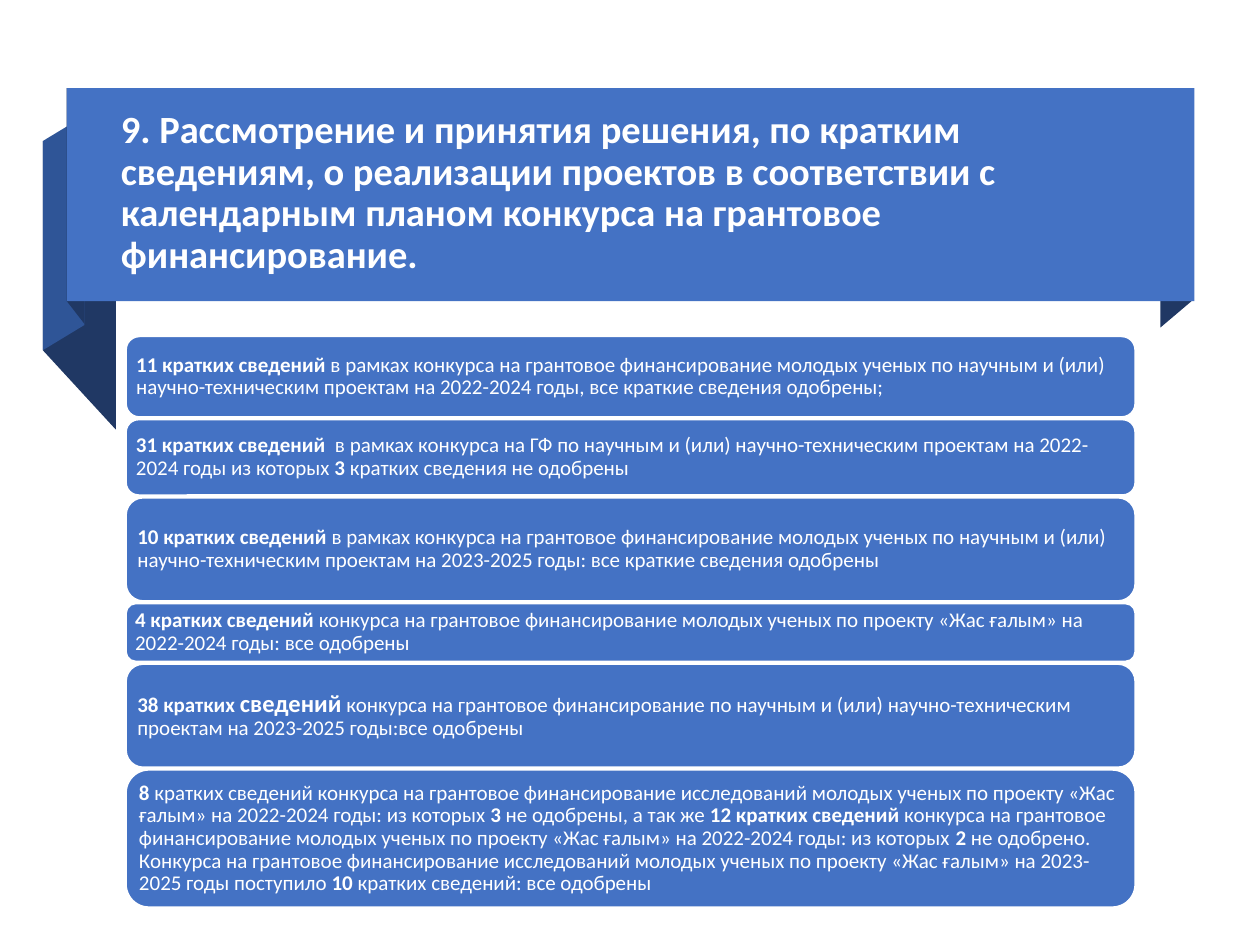
"""Build a ribbon-titled slide listing the decisions on project summaries."""
import pptx
import pptx.dml.color
import pptx.enum.shapes
import pptx.enum.text
import pptx.util

THEME = {
    "blue": "4472C4", "mid": "2F5597", "navy": "203864", "white": "FFFFFF",
    "font": "Calibri", "title": 22,
    "styles": {"plain": (12, False), "bold": (12, True), "large": (14, True)},
}
SHAPE = pptx.enum.shapes.MSO_SHAPE

prs = pptx.Presentation()
prs.slide_width = pptx.util.Inches(10)
prs.slide_height = pptx.util.Inches(7.5)
CELL = prs.slide_width / 100


def grid(*cells):
    return [round(c * CELL) for c in cells]


def paint(sp, color):
    sp.shadow.inherit = False
    sp.fill.solid()
    sp.fill.fore_color.rgb = pptx.dml.color.RGBColor.from_string(THEME[color])
    sp.line.fill.background()


s = prs.slides.add_slide(prs.slide_layouts[5])
white = pptx.dml.color.RGBColor.from_string(THEME["white"])

ribbon = s.shapes.add_group_shape()
folds = [
    ("navy", [(94.7, 23.8), (92.1, 26), (92.1, 9.1), (94.7, 7)]),
    ("navy", [(9.2, 34.1), (3.4, 27.8), (3.4, 11.2), (9.2, 17.5)]),
    ("mid", [(6.7, 25.8), (3.4, 27.8), (3.4, 11.2), (6.7, 9.2)]),
    ("navy", [(6.7, 25.7), (5.3, 23.9), (5.3, 7), (6.7, 8.9)]),
]
for color, corners in folds:
    points = [grid(*corner) for corner in corners]
    builder = ribbon.shapes.build_freeform(*points[0])
    builder.add_line_segments(points[1:], close=True)
    paint(builder.convert_to_shape(), color)
paint(ribbon.shapes.add_shape(SHAPE.RECTANGLE, *grid(5.3, 7, 89.5, 16.9)), "blue")

title = s.shapes.title
s.shapes.element.append(title.element)
title.left, title.top, title.width, title.height = grid(8.6, 8.1, 84.5, 14.5)
tf = title.text_frame
tf.text = (
    "9. Рассмотрение и принятия решения, по кратким сведениям, о реализации проектов "
    "в соответствии с календарным планом конкурса на грантовое финансирование."
)
tf.word_wrap = True
tf.auto_size = pptx.enum.text.MSO_AUTO_SIZE.NONE
tf.vertical_anchor = pptx.enum.text.MSO_ANCHOR.MIDDLE
p = tf.paragraphs[0]
p.alignment = pptx.enum.text.PP_ALIGN.LEFT
p.line_spacing = 0.9
r = p.runs[0]
r.font.name = THEME["font"]
r.font.size = pptx.util.Pt(THEME["title"])
r.font.bold = True
r.font.color.rgb = white

decisions = [
    (6.4, [
        ("bold", "11 кратких сведений"),
        ("plain", " в рамках конкурса на грантовое финансирование молодых ученых по научным "
                  "и (или) научно-техническим проектам на 2022-2024 годы, все краткие сведения "
                  "одобрены;"),
    ]),
    (6, [
        ("bold", "31 кратких сведений "),
        ("plain", " в рамках конкурса на ГФ по научным и (или) научно-техническим проектам "
                  "на 2022-2024 годы из которых "),
        ("bold", "3"),
        ("plain", " кратких сведения не одобрены"),
    ]),
    (8.2, [
        ("bold", "10 кратких сведений"),
        ("plain", " в рамках конкурса на грантовое финансирование молодых ученых по научным "
                  "и (или) научно-техническим проектам на 2023-2025 годы: все краткие сведения "
                  "одобрены"),
    ]),
    (4.6, [
        ("bold", "4 кратких сведений "),
        ("plain", "конкурса на грантовое финансирование молодых ученых по проекту "
                  "«Жас ғалым» на 2022-2024 годы: все одобрены"),
    ]),
    (8.2, [
        ("bold", "38 кратких "),
        ("large", "сведений"),
        ("bold", " "),
        ("plain", "конкурса на грантовое финансирование по научным и (или) научно-техническим "
                  "проектам на 2023-2025 годы:все одобрены"),
    ]),
    (10.9, [
        ("bold", "8"),
        ("plain", " кратких сведений конкурса на грантовое финансирование исследований молодых "
                  "ученых по проекту «Жас ғалым» на 2022-2024 годы: из которых "),
        ("bold", "3 "),
        ("plain", "не одобрены, а так же "),
        ("bold", "12 кратких сведений"),
        ("plain", " конкурса на грантовое финансирование молодых ученых по проекту "
                  "«Жас ғалым» на 2022-2024 годы: из которых "),
        ("bold", "2"),
        ("plain", " не одобрено. Конкурса на грантовое финансирование исследований молодых "
                  "ученых по проекту «Жас ғалым» на 2023-2025 годы поступило "),
        ("bold", "10"),
        ("plain", " кратких сведений: все одобрены"),
    ]),
]
GAP = 0.2
top = 26.7
cards = s.shapes.add_group_shape()
for height, runs in decisions:
    sp = cards.shapes.add_shape(SHAPE.ROUNDED_RECTANGLE, *grid(10, top, 80.1, height))
    paint(sp, "blue")
    sp.line.color.rgb = white
    sp.line.width = pptx.util.Pt(1)
    tf = sp.text_frame
    tf.word_wrap = True
    tf.vertical_anchor = pptx.enum.text.MSO_ANCHOR.MIDDLE
    tf.margin_left, tf.margin_top, tf.margin_right, tf.margin_bottom = grid(*[0.5] * 4)
    p = tf.paragraphs[0]
    p.alignment = pptx.enum.text.PP_ALIGN.LEFT
    p.line_spacing = 0.9
    for style, text in runs:
        size, bold = THEME["styles"][style]
        r = p.add_run()
        r.text = text
        r.font.name = THEME["font"]
        r.font.size = pptx.util.Pt(size)
        r.font.bold = bold
        r.font.color.rgb = white
    top += height + GAP

prs.save("out.pptx")
